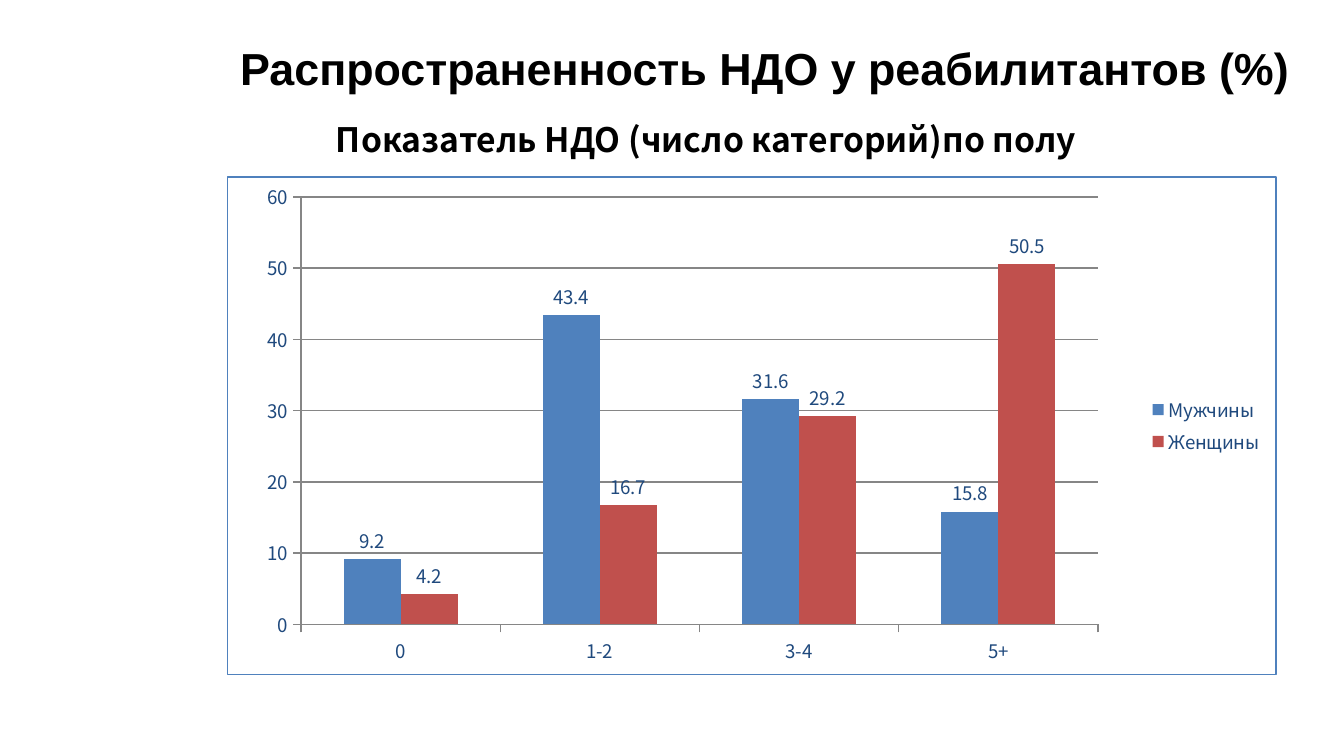
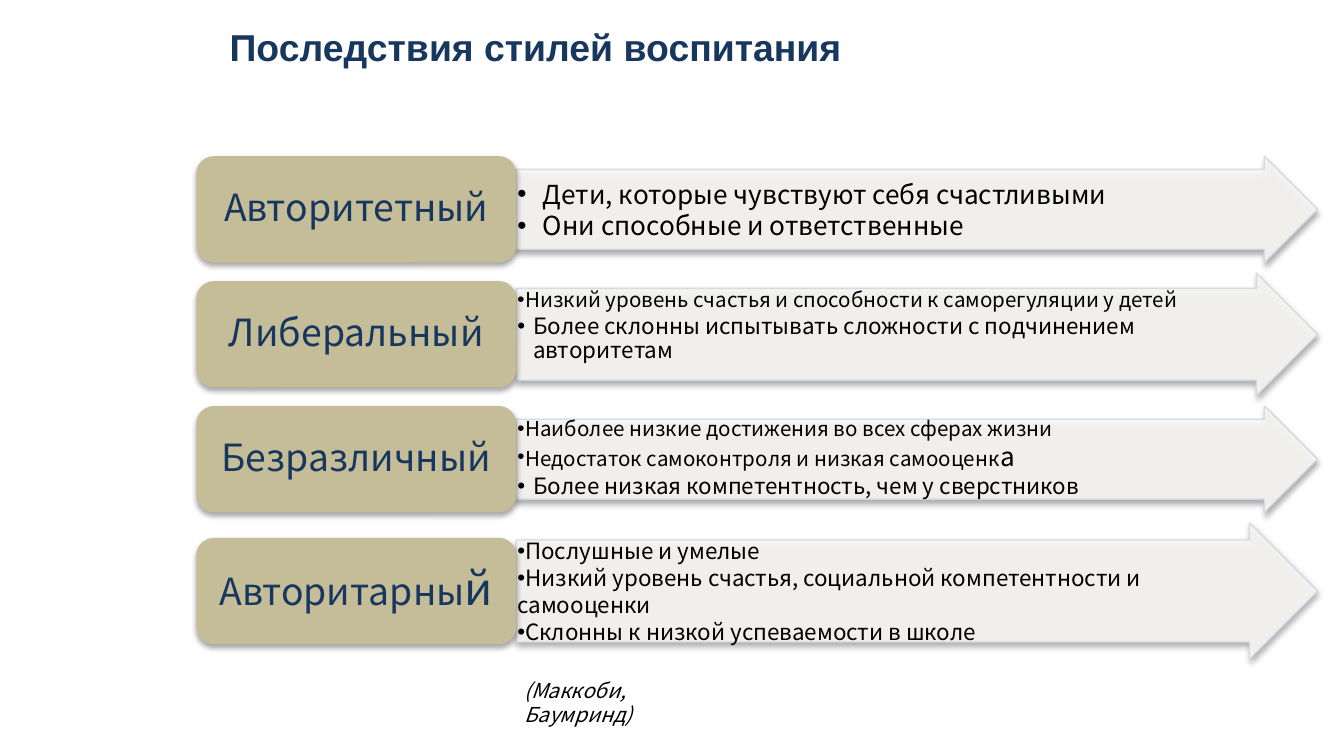
from typing import NamedTuple

from lxml.etree import SubElement
from pptx import Presentation
from pptx.chart.data import CategoryChartData
from pptx.dml.color import RGBColor
from pptx.enum.chart import XL_CHART_TYPE as ChartType
from pptx.enum.chart import XL_LABEL_POSITION as LabelPosition
from pptx.enum.chart import XL_LEGEND_POSITION as LegendPosition
from pptx.enum.chart import XL_TICK_MARK as TickMark
from pptx.enum.shapes import MSO_SHAPE as ShapeType
from pptx.enum.text import MSO_ANCHOR as Anchor
from pptx.enum.text import PP_ALIGN as Align
from pptx.oxml import parse_xml
from pptx.oxml.ns import nsdecls, qn
from pptx.util import Cm, Pt

BLACK = RGBColor(0x00, 0x00, 0x00)
NAVY = RGBColor(0x17, 0x37, 0x5E)
CHART_TEXT = RGBColor(0x1F, 0x49, 0x7D)
BLUE = RGBColor(0x4F, 0x81, 0xBD)
RED = RGBColor(0xC0, 0x50, 0x4D)
GRID = RGBColor(0x86, 0x86, 0x86)
SAND = RGBColor(0xC4, 0xBD, 0x97)
CREAM = RGBColor(0xF8, 0xF7, 0xF3)
PALE_BLUE = RGBColor(0xD0, 0xD8, 0xE8)

TITLE_FONT = "Arial"
BODY_FONT = "Noto Sans CJK KR"


class Box(NamedTuple):
    """Left, top, width and height in centimetres."""
    left: float
    top: float
    width: float
    height: float

    def lengths(self) -> list:
        return [Cm(value) for value in self]


class Piece(NamedTuple):
    text: str
    size: float


class Line(NamedTuple):
    """One paragraph; indent is the hanging indent of its bullet in cm."""
    pieces: list[Piece]
    indent: float | None = None
    spacing: float | None = None
    after: float = 0


class Series(NamedTuple):
    name: str
    values: list[float]
    color: RGBColor


class Style(NamedTuple):
    label: list[Piece]
    effects: list[Line]
    height: float = 2.01
    anchor: Anchor = Anchor.MIDDLE


def effect(text: str, size: float, indent: float, extra: tuple = ()) -> Line:
    """A tightly set bullet line, with optional further pieces."""
    return Line([Piece(text, size), *extra], indent, 0.9, 0.15 * size)


SERIES = [
    Series("Мужчины", [9.2, 43.4, 31.6, 15.8], BLUE),
    Series("Женщины", [4.2, 16.7, 29.2, 50.5], RED),
]

STYLES = [
    Style([Piece("Авторитетный", 20)], [
        Line([Piece("Дети, которые чувствуют себя счастливыми", 14)], 0.48),
        Line([Piece("Они способные и ответственные", 14)], 0.48),
    ]),
    Style([Piece("Либеральный", 20)], [
        effect("Низкий уровень счастья и способности к саморегуляции у детей", 11, 0.15),
        effect("Более склонны испытывать сложности с подчинением авторитетам", 12, 0.3),
    ], 2.31, Anchor.TOP),
    Style([Piece("Безразличный", 20)], [
        effect("Наиболее низкие достижения во всех сферах жизни", 11, 0.15),
        effect("Недостаток самоконтроля и низкая самооценк", 11, 0.15, (Piece("а", 14),)),
        effect("Более низкая компетентность, чем у сверстников", 12, 0.3),
    ]),
    Style([Piece("Авторитарны", 20), Piece("й", 24)], [
        Line([Piece("Послушные и умелые", 12)], 0),
        Line([Piece("Низкий уровень счастья, социальной компетентности и самооценки", 12)], 0),
        Line([Piece("Склонны к низкой успеваемости в школе", 12)], 0),
    ], 2.57),
]

ROWS_TOP, ROW_GAP = 2.95, 0.2
LABEL_LEFT, LABEL_WIDTH, LABEL_HEIGHT, LABEL_INSET = 3.71, 6.05, 2.01, 0.1
ARROW_LEFT, ARROW_WIDTH = 9.76, 15.14
SHAFT, HEAD = 0.75, 0.5


def set_all(target, **values) -> None:
    for name, value in values.items():
        setattr(target, name, value)


def add_bullet(paragraph, indent: float) -> None:
    properties = paragraph._p.get_or_add_pPr()
    properties.set("marL", str(Cm(indent)))
    properties.set("indent", str(-Cm(indent)))
    SubElement(properties, qn("a:buFont")).set("typeface", "Arial")
    SubElement(properties, qn("a:buChar")).set("char", "•")


def add_text(slide, box: Box, lines: list[Line], color: RGBColor = BLACK,
             anchor: Anchor = Anchor.TOP, align: Align = Align.LEFT,
             margins: tuple | None = None, font: str = BODY_FONT, **font_format) -> None:
    """Margins are left, top, right and bottom in centimetres."""
    frame = slide.shapes.add_textbox(*box.lengths()).text_frame
    set_all(frame, word_wrap=True, vertical_anchor=anchor)
    if margins:
        for side, margin in zip(("left", "top", "right", "bottom"), margins):
            setattr(frame, f"margin_{side}", Cm(margin))
    for number, line in enumerate(lines):
        paragraph = frame.add_paragraph() if number else frame.paragraphs[0]
        set_all(paragraph, alignment=align)
        if line.spacing:
            set_all(paragraph, line_spacing=line.spacing, space_after=Pt(line.after))
        if line.indent is not None:
            paragraph.level = 1
            add_bullet(paragraph, line.indent)
        for piece in line.pieces:
            run = paragraph.add_run()
            run.text = piece.text
            set_all(run.font, name=font, size=Pt(piece.size), **font_format)
            run.font.color.rgb = color


def add_title(slide, box: Box, text: str, size: float, color: RGBColor) -> None:
    add_text(slide, box, [Line([Piece(text, size)])], color, Anchor.MIDDLE,
             font=TITLE_FONT, bold=True)


def add_shadowed_shape(slide, kind: ShapeType, box: Box, fill: RGBColor,
                       line: RGBColor | None = None, opacity: int = 100):
    shape = slide.shapes.add_shape(kind, *box.lengths())
    shape.fill.solid()
    shape.fill.fore_color.rgb = fill
    if line is None:
        shape.line.fill.background()
    else:
        shape.line.color.rgb = line
        shape.line.width = Pt(0.75)
    properties = shape._element.spPr
    if opacity < 100:
        for color in list(properties.iter(qn("a:srgbClr"))):
            SubElement(color, qn("a:alpha")).set("val", str(opacity * 1000))
    shape.shadow.inherit = False
    properties.find(qn("a:effectLst")).append(parse_xml(
        f'<a:outerShdw {nsdecls("a")} blurRad="{Pt(3.1)}" dist="{Pt(1.8)}" dir="5400000" '
        'rotWithShape="0"><a:srgbClr val="000000"><a:alpha val="35000"/></a:srgbClr>'
        '</a:outerShdw>'))
    return shape


def add_style_row(slide, style: Style, top: float) -> None:
    """An arrow with the effects of one style, and its label centred beside it."""
    height = style.height
    arrow_box = Box(ARROW_LEFT, top, ARROW_WIDTH, height)
    arrow = add_shadowed_shape(slide, ShapeType.RIGHT_ARROW, arrow_box, CREAM, PALE_BLUE, 90)
    arrow.adjustments[0], arrow.adjustments[1] = SHAFT, HEAD
    text_box = Box(ARROW_LEFT, top + height * (1 - SHAFT) / 2,
                   ARROW_WIDTH - height * HEAD * SHAFT, height * SHAFT)
    add_text(slide, text_box, style.effects, anchor=style.anchor, margins=(0.02,) * 4)

    label_top = top + (height - LABEL_HEIGHT) / 2
    label_box = Box(LABEL_LEFT, label_top, LABEL_WIDTH, LABEL_HEIGHT)
    add_shadowed_shape(slide, ShapeType.ROUNDED_RECTANGLE, label_box, SAND)
    inner_box = Box(LABEL_LEFT + LABEL_INSET, label_top + LABEL_INSET,
                    LABEL_WIDTH - 2 * LABEL_INSET, LABEL_HEIGHT - 2 * LABEL_INSET)
    add_text(slide, inner_box, [Line(style.label, spacing=0.9, after=7)], NAVY,
             Anchor.MIDDLE, Align.CENTER, (0.2, 0.1, 0.2, 0.1))


def set_plot_layout(chart, **fractions: float) -> None:
    """Place the inner plot area by fractions of the chart."""
    plot_area = chart.element.find(".//" + qn("c:plotArea"))
    for old in plot_area.findall(qn("c:layout")):
        plot_area.remove(old)
    values = "".join(f'<c:{name} val="{value}"/>' for name, value in fractions.items())
    plot_area.insert(0, parse_xml(
        f'<c:layout {nsdecls("c")}><c:manualLayout><c:layoutTarget val="inner"/>'
        f'<c:xMode val="edge"/><c:yMode val="edge"/>{values}</c:manualLayout></c:layout>'))


def add_border(chart, color: RGBColor) -> None:
    chart.element.find(qn("c:chart")).addnext(parse_xml(
        f'<c:spPr {nsdecls("c", "a")}><a:noFill/><a:ln w="{Pt(0.75)}"><a:solidFill>'
        f'<a:srgbClr val="{color}"/></a:solidFill></a:ln></c:spPr>'))


def add_prevalence_chart(slide, box: Box) -> None:
    data = CategoryChartData()
    data.categories = ["0", "1-2", "3-4", "5+"]
    for series in SERIES:
        data.add_series(series.name, series.values)
    chart = slide.shapes.add_chart(ChartType.COLUMN_CLUSTERED, *box.lengths(), data).chart
    set_all(chart.font, name=BODY_FONT, size=Pt(10))
    chart.font.color.rgb = CHART_TEXT
    set_all(chart, has_title=False, has_legend=True)
    set_all(chart.legend, position=LegendPosition.RIGHT, include_in_layout=False)

    chart.value_axis.has_major_gridlines = True
    set_all(chart.value_axis, minimum_scale=0, maximum_scale=60, major_unit=10)
    for axis in (chart.category_axis, chart.value_axis):
        axis.major_tick_mark = TickMark.OUTSIDE
    for part in (chart.category_axis, chart.value_axis, chart.value_axis.major_gridlines):
        part.format.line.color.rgb = GRID
        part.format.line.width = Pt(0.75)

    plot = chart.plots[0]
    set_all(plot, gap_width=150, overlap=0, vary_by_categories=False, has_data_labels=True)
    set_all(plot.data_labels, show_value=True, position=LabelPosition.OUTSIDE_END)
    for column, series in zip(plot.series, SERIES):
        column.format.fill.solid()
        column.format.fill.fore_color.rgb = series.color
    set_plot_layout(chart, x=0.07, y=0.04, w=0.76, h=0.86)
    add_border(chart, BLUE)


def build_prevalence(slide) -> None:
    add_title(slide, Box(4.29, 0.08, 21.11, 2.39),
              "Распространенность НДО у реабилитантов (%)", 24, BLACK)
    add_prevalence_chart(slide, Box(4.29, 3.33, 19.84, 9.42))
    add_text(slide, Box(6.1, 2.13, 15.19, 1.02),
             [Line([Piece("Показатель НДО (число категорий)по полу", 18)])], bold=True)


def build_parenting_styles(slide) -> None:
    add_title(slide, Box(4.09, 0, 21.31, 1.75), "Последствия стилей воспитания", 20, NAVY)
    top = ROWS_TOP
    for style in STYLES:
        add_style_row(slide, style, top)
        top += style.height + ROW_GAP
    add_text(slide, Box(9.73, 12.7, 4.47, 0.66), [Line([Piece("(Маккоби, Баумринд)", 11)])],
             margins=(0.18, 0.1, 0.8, 0.1), italic=True)


def main() -> None:
    presentation = Presentation()
    set_all(presentation, slide_width=Cm(25.4), slide_height=Cm(14.28))
    for build in (build_prevalence, build_parenting_styles):
        build(presentation.slides.add_slide(presentation.slide_layouts[6]))
    presentation.save("out.pptx")


if __name__ == "__main__":
    main()
